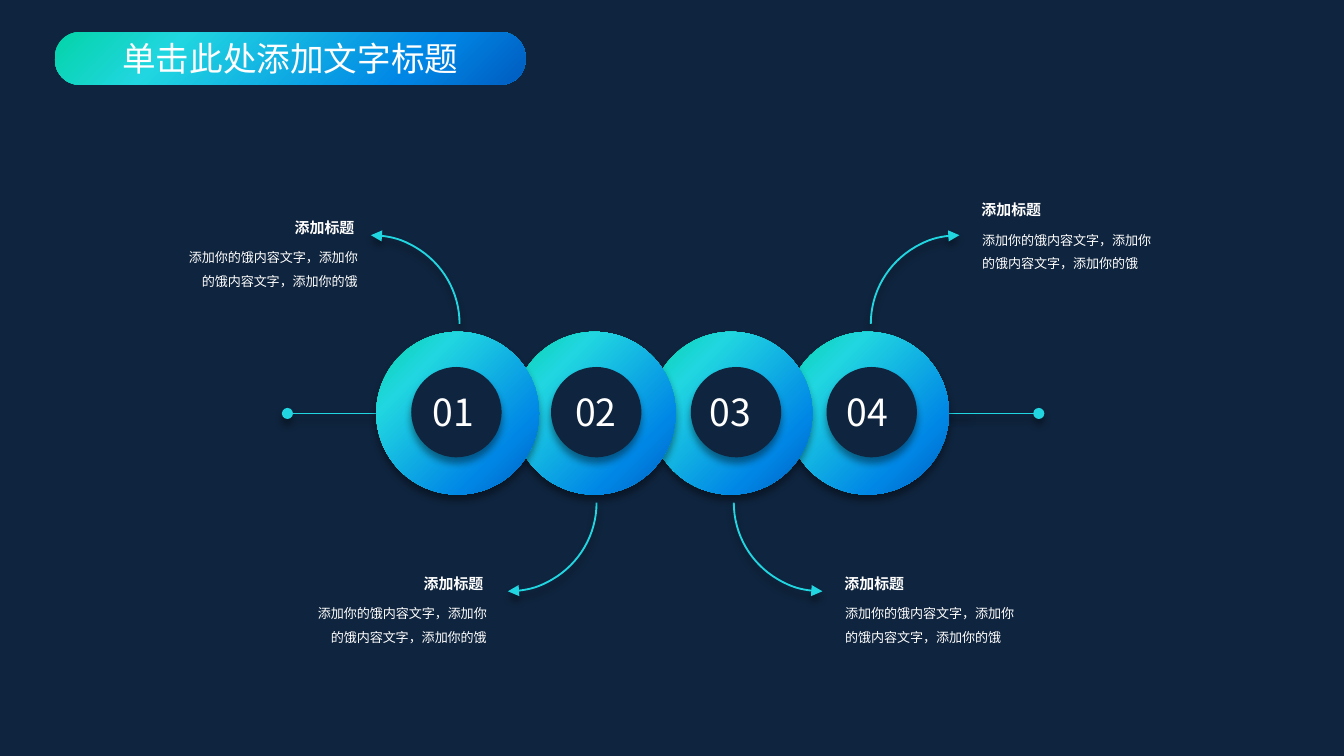
from dataclasses import dataclass

from lxml import etree
from pptx import Presentation
from pptx.dml.color import RGBColor
from pptx.enum.shapes import MSO_CONNECTOR, MSO_SHAPE
from pptx.enum.text import MSO_ANCHOR, PP_ALIGN
from pptx.oxml import parse_xml
from pptx.oxml.ns import nsdecls, qn
from pptx.shapes.autoshape import Shape
from pptx.shapes.base import BaseShape
from pptx.slide import Slide
from pptx.text.text import TextFrame
from pptx.util import Pt

ELLIPSE = MSO_SHAPE.OVAL
ARC = MSO_SHAPE.ARC
PILL = MSO_SHAPE.ROUNDED_RECTANGLE
STRAIGHT = MSO_CONNECTOR.STRAIGHT
MIDDLE = MSO_ANCHOR.MIDDLE
LEFT, CENTER, RIGHT = PP_ALIGN.LEFT, PP_ALIGN.CENTER, PP_ALIGN.RIGHT

NAVY = RGBColor(0x0F, 0x24, 0x3E)
WHITE = RGBColor(0xFF, 0xFF, 0xFF)
GREEN = RGBColor(0x03, 0xD4, 0xA8)
CYAN = RGBColor(0x21, 0xD6, 0xE0)
BLUE = RGBColor(0x00, 0x87, 0xE6)
DEEP_BLUE = RGBColor(0x00, 0x5C, 0xBF)
BLACK = RGBColor(0x00, 0x00, 0x00)
GRADIENT = ((0, GREEN), (25, CYAN), (75, BLUE), (100, DEEP_BLUE))

CJK_FONT = "Noto Sans CJK SC"
HEADING_FONT = "Lato"
HEADING = "添加标题"
BODY = "添加你的饿内容文字，添加你的饿内容文字，添加你的饿"

RING_LEFT, RING_TOP, RING_PITCH, RING_SIZE = 201.6, 177.8, 73.2, 87.2
HUB_TOP, HUB_SIZE = 196.6, 48.4
AXIS_Y = 221.5
ARC_SIZE = 95


@dataclass(frozen=True)
class Step:
    number: str
    hub_left: float
    number_left: float


@dataclass(frozen=True)
class Callout:
    arc_left: float
    arc_top: float
    flips: tuple[str, ...]
    note_left: float
    note_top: float
    align: PP_ALIGN


STEPS = (
    Step("01", 220.3, 224.6),
    Step("02", 295.2, 301),
    Step("03", 370.1, 373),
    Step("04", 442.8, 446.4),
)
CALLOUTS = (
    Callout(151.2, 126, (), 89.3, 126, RIGHT),
    Callout(466.5, 126, ("flipH",), 519.1, 116.6, LEFT),
    Callout(224.6, 221.8, ("flipV",), 158.4, 316.8, RIGHT),
    Callout(393.1, 221.8, ("flipH", "flipV"), 445.7, 316.8, LEFT),
)


def add_shadow(item: BaseShape) -> None:
    properties = item._element.spPr
    effects = properties.find(qn("a:effectLst"))
    if effects is None:
        effects = etree.SubElement(properties, qn("a:effectLst"))
    effects.append(parse_xml(
        f'<a:outerShdw {nsdecls("a")} blurRad="{Pt(4)}" dist="{Pt(3)}" dir="5400000" '
        f'algn="t" rotWithShape="0"><a:srgbClr val="{BLACK}"><a:alpha val="40000"/>'
        '</a:srgbClr></a:outerShdw>'))


def fill_gradient(shape: Shape) -> None:
    shape.fill.gradient()
    shape.fill.gradient_angle = 315
    stops = shape._element.spPr.find(qn("a:gradFill")).find(qn("a:gsLst"))
    for stop in list(stops):
        stops.remove(stop)
    for position, color in GRADIENT:
        stops.append(parse_xml(
            f'<a:gs {nsdecls("a")} pos="{position * 1000}"><a:srgbClr val="{color}"/></a:gs>'))


def add_solid(slide: Slide, kind: MSO_SHAPE, left: float, top: float,
              width: float, height: float) -> Shape:
    shape = slide.shapes.add_shape(kind, Pt(left), Pt(top), Pt(width), Pt(height))
    shape.shadow.inherit = False
    shape.line.fill.background()
    return shape


def style_line(item: BaseShape, end: str, marker: str) -> None:
    item.line.color.rgb = CYAN
    item.line.width = Pt(1)
    outline = item._element.spPr.find(qn("a:ln"))
    etree.SubElement(outline, qn(f"a:{end}"), type=marker)


def write(frame: TextFrame, text: str, size: float, align: PP_ALIGN,
          font: str = CJK_FONT, bold: bool = False, spacing: float = 1.0) -> None:
    paragraph = frame.paragraphs[0]
    paragraph.text = text
    paragraph.alignment = align
    paragraph.line_spacing = spacing
    paragraph.font.size = Pt(size)
    paragraph.font.bold = bold
    paragraph.font.color.rgb = WHITE
    paragraph.font.name = font
    defaults = paragraph._p.pPr.find(qn("a:defRPr"))
    etree.SubElement(defaults, qn("a:ea"), typeface=CJK_FONT)


def add_text_frame(slide: Slide, left: float, top: float, width: float,
                   height: float, wrap: bool = True) -> TextFrame:
    frame = slide.shapes.add_textbox(Pt(left), Pt(top), Pt(width), Pt(height)).text_frame
    frame.word_wrap = wrap
    return frame


def add_title(slide: Slide) -> None:
    title = add_solid(slide, PILL, 29.5, 17.2, 252, 28.2)
    title.adjustments[0] = 0.468
    fill_gradient(title)
    title.text_frame.vertical_anchor = MIDDLE
    write(title.text_frame, "单击此处添加文字标题", 18, CENTER)


def add_axis(slide: Slide, start: float, end: float) -> None:
    axis = slide.shapes.add_connector(STRAIGHT, Pt(start), Pt(AXIS_Y), Pt(end), Pt(AXIS_Y))
    style_line(axis, "tailEnd", "oval")
    add_shadow(axis)


def add_step(slide: Slide, index: int, step: Step) -> None:
    ring = add_solid(slide, ELLIPSE, RING_LEFT + index * RING_PITCH, RING_TOP,
                     RING_SIZE, RING_SIZE)
    fill_gradient(ring)
    add_shadow(ring)
    hub = add_solid(slide, ELLIPSE, step.hub_left, HUB_TOP, HUB_SIZE, HUB_SIZE)
    hub.fill.solid()
    hub.fill.fore_color.rgb = NAVY
    add_shadow(hub)
    write(add_text_frame(slide, step.number_left, 205.2, 56.2, 31.7), step.number, 20, LEFT)


def add_callout(slide: Slide, callout: Callout) -> None:
    arrow = add_solid(slide, ARC, callout.arc_left, callout.arc_top, ARC_SIZE, ARC_SIZE)
    arrow.fill.background()
    style_line(arrow, "headEnd", "triangle")
    add_shadow(arrow)
    for flip in callout.flips:
        arrow._element.spPr.xfrm.set(flip, "1")
    body = add_text_frame(slide, callout.note_left, callout.note_top, 109.4, 31)
    write(body, BODY, 7, callout.align, spacing=1.5)
    heading_shift = 61.2 if callout.align == RIGHT else -0.7
    heading = add_text_frame(slide, callout.note_left + heading_shift,
                             callout.note_top - 12.6, 46.8, 17.3, wrap=False)
    write(heading, HEADING, 8, CENTER, font=HEADING_FONT, bold=True)


def main() -> None:
    presentation = Presentation()
    presentation.slide_width = Pt(720)
    presentation.slide_height = Pt(405)
    slide = presentation.slides.add_slide(presentation.slide_layouts[6])
    slide.background.fill.solid()
    slide.background.fill.fore_color.rgb = NAVY

    add_title(slide)
    add_axis(slide, 519.1, 154)
    add_axis(slide, 508.3, 556.5)
    for callout in CALLOUTS:
        add_callout(slide, callout)
    for index, step in reversed(list(enumerate(STEPS))):
        add_step(slide, index, step)
    presentation.save("out.pptx")


if __name__ == "__main__":
    main()
